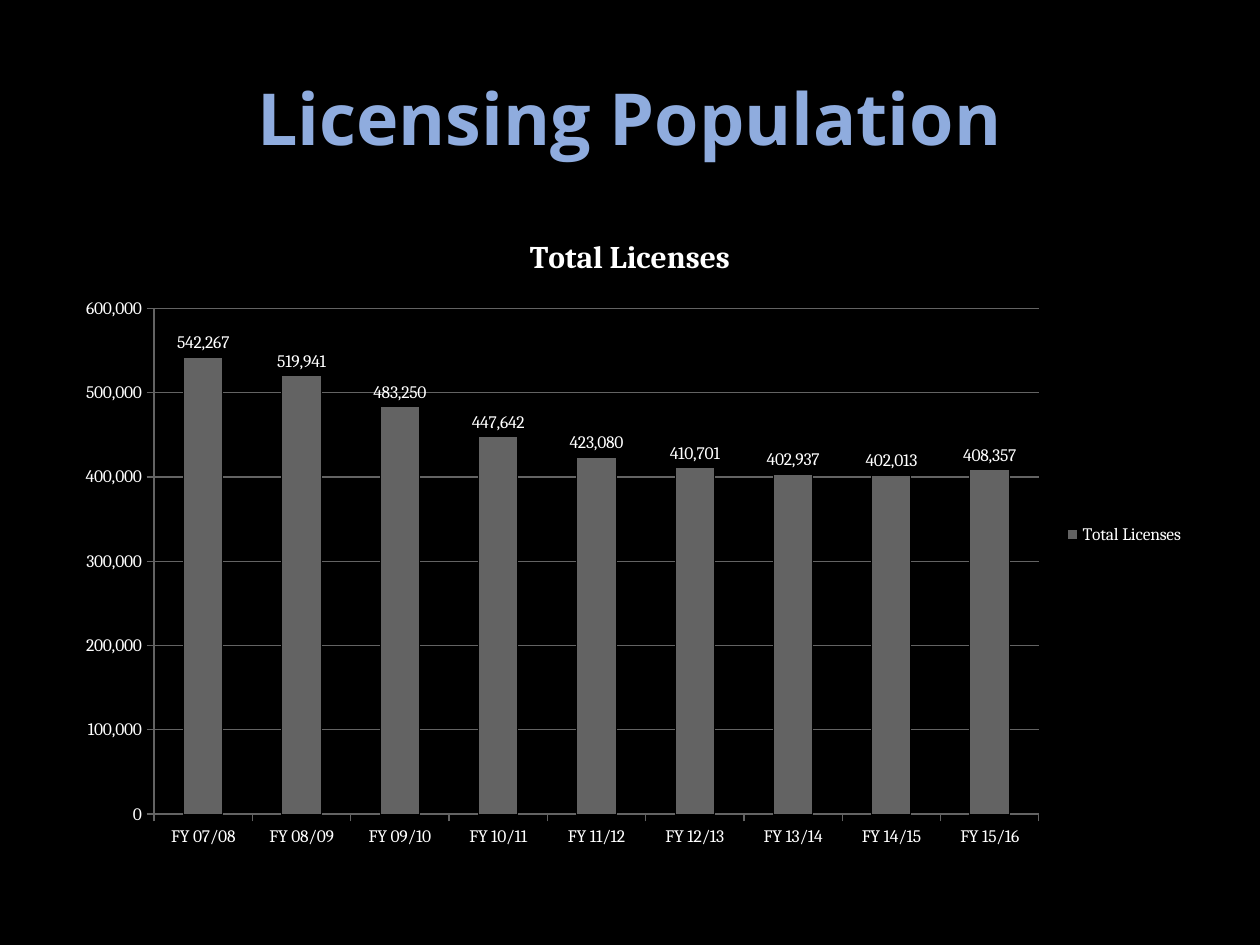
"""Build the licensing population slide with its column chart."""
import pptx
import pptx.chart.data
import pptx.dml.color
import pptx.enum.chart
import pptx.enum.text
import pptx.util
from pptx.util import Cm, Pt

BLACK = pptx.dml.color.RGBColor(0x00, 0x00, 0x00)
WHITE = pptx.dml.color.RGBColor(0xFF, 0xFF, 0xFF)
BLUE = pptx.dml.color.RGBColor(0x8F, 0xAC, 0xDE)
GRAY = pptx.dml.color.RGBColor(0x63, 0x63, 0x63)

HEADING = "Licensing Population"
SERIES_NAME = "Total Licenses"
FIRST_YEAR = 7
LICENSES = [542267, 519941, 483250, 447642, 423080, 410701, 402937, 402013, 408357]
NUMBER_FORMAT = "#,##0"

LEFT, WIDTH = Cm(1.27), Cm(22.86)


def style_font(font, name, size, color, bold=False):
    font.name = name
    font.size = Pt(size)
    font.bold = bold
    font.color.rgb = color


def add_run(para, text, *style):
    span = para.add_run()
    span.text = text
    style_font(span.font, *style)


def add_heading(page):
    box = page.shapes.add_textbox(LEFT, Cm(0.76), WIDTH, Cm(3.18))
    frame = box.text_frame
    frame.word_wrap = True
    frame.vertical_anchor = pptx.enum.text.MSO_ANCHOR.MIDDLE
    para = frame.paragraphs[0]
    para.alignment = pptx.enum.text.PP_ALIGN.CENTER
    add_run(para, HEADING, "Open Sans", 41, BLUE, True)


def style_axis(axis):
    axis.major_tick_mark = pptx.enum.chart.XL_TICK_MARK.OUTSIDE
    axis.minor_tick_mark = pptx.enum.chart.XL_TICK_MARK.NONE
    axis.format.line.color.rgb = GRAY
    axis.format.line.width = Pt(0.75)


def add_license_chart(page):
    data = pptx.chart.data.CategoryChartData(number_format=NUMBER_FORMAT)
    data.categories = [
        f"FY {year:02}/{year + 1:02}"
        for year in range(FIRST_YEAR, FIRST_YEAR + len(LICENSES))
    ]
    data.add_series(SERIES_NAME, LICENSES)
    chart = page.shapes.add_chart(
        pptx.enum.chart.XL_CHART_TYPE.COLUMN_CLUSTERED,
        LEFT, Cm(4.24), WIDTH, Cm(13.08), data,
    ).chart
    style_font(chart.font, "Cambria", 10, WHITE)

    chart.has_title = True
    add_run(chart.chart_title.text_frame.paragraphs[0],
            SERIES_NAME, "Cambria", 18, WHITE, True)
    chart.chart_title.include_in_layout = False
    chart.has_legend = True
    chart.legend.position = pptx.enum.chart.XL_LEGEND_POSITION.RIGHT
    chart.legend.include_in_layout = False

    values = chart.value_axis
    for axis in (chart.category_axis, values):
        style_axis(axis)
    values.minimum_scale = 0
    values.maximum_scale = 600000
    values.major_unit = 100000
    values.tick_labels.number_format = NUMBER_FORMAT
    values.tick_labels.number_format_is_linked = False
    values.has_major_gridlines = True
    values.major_gridlines.format.line.color.rgb = GRAY
    values.major_gridlines.format.line.width = Pt(0.75)

    plot = chart.plots[0]
    plot.gap_width = 150
    plot.vary_by_categories = False
    bars = plot.series[0]
    bars.format.fill.solid()
    bars.format.fill.fore_color.rgb = GRAY
    bars.format.line.color.rgb = BLACK
    labels = bars.data_labels
    labels.show_value = True
    labels.position = pptx.enum.chart.XL_LABEL_POSITION.OUTSIDE_END
    labels.number_format = NUMBER_FORMAT
    labels.number_format_is_linked = False
    style_font(labels.font, "Cambria", 10, WHITE)


def main():
    deck = pptx.Presentation()
    deck.slide_width, deck.slide_height = Cm(25.4), Cm(19.05)
    page = deck.slides.add_slide(deck.slide_layouts[6])
    page.background.fill.solid()
    page.background.fill.fore_color.rgb = BLACK
    add_heading(page)
    add_license_chart(page)
    deck.save("out.pptx")


if __name__ == "__main__":
    main()
